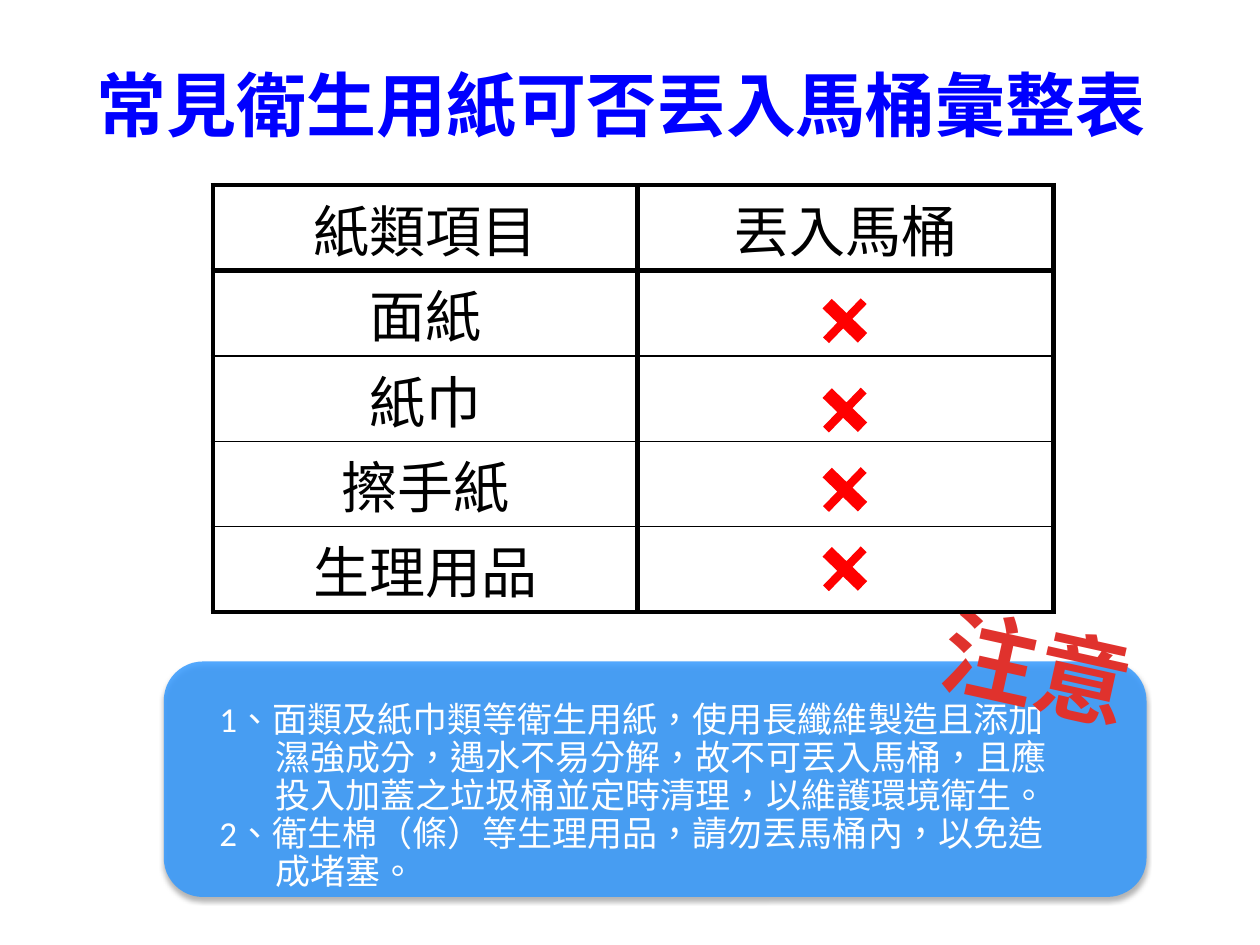
from dataclasses import dataclass

from lxml.etree import SubElement
from pptx import Presentation
from pptx.dml.color import RGBColor
from pptx.enum.lang import MSO_LANGUAGE_ID
from pptx.enum.shapes import MSO_SHAPE
from pptx.enum.text import MSO_ANCHOR, PP_ALIGN
from pptx.oxml.ns import qn
from pptx.util import Pt


@dataclass(frozen=True)
class Theme:
    title: str = "0000FF"
    ink: str = "000000"
    paper: str = "FFFFFF"
    panel: str = "3399FF"
    badge: str = "E0322D"
    cross: str = "FF0000"
    heading_font: str = "Noto Sans CJK SC"
    table_font: str = "Times New Roman"
    note_font: str = "Calibri"
    title_size: int = 40
    table_size: int = 32
    note_size: int = 20
    badge_size: int = 54
    thick: int = 3
    thin: int = 1


def add_element(parent, tag, **attributes):
    return SubElement(parent, qn(tag), {name: str(value) for name, value in attributes.items()})


class SlideBuilder:
    def __init__(self, page, theme):
        self.page = page
        self.theme = theme

    def format_span(self, span, size, colour, font, bold=False):
        span.font.size = Pt(size)
        span.font.bold = bold
        span.font.name = font
        span.font.color.rgb = RGBColor.from_string(colour)
        span.font.language_id = MSO_LANGUAGE_ID.TRADITIONAL_CHINESE
        east_asian = add_element(span.font._element, "a:ea", typeface=self.theme.heading_font)
        span.font._element.find(qn("a:latin")).addnext(east_asian)

    def add_text(self, bounds, text, size, colour, font, bold=False, wrap=False, align=PP_ALIGN.LEFT):
        box = self.page.shapes.add_textbox(*map(Pt, bounds))
        frame = box.text_frame
        frame.word_wrap = wrap
        frame.text = text
        for para in frame.paragraphs:
            para.alignment = align
            for span in para.runs:
                self.format_span(span, size, colour, font, bold)
        return box

    def add_solid_shape(self, kind, bounds, colour):
        shape = self.page.shapes.add_shape(kind, *map(Pt, bounds))
        shape.shadow.inherit = False
        shape.fill.solid()
        shape.fill.fore_color.rgb = RGBColor.from_string(colour)
        shape.line.fill.background()
        return shape

    def add_panel(self, bounds, opacity):
        panel = self.add_solid_shape(MSO_SHAPE.ROUNDED_RECTANGLE, bounds, self.theme.panel)
        properties = panel._element.spPr
        add_element(properties.find(".//" + qn("a:srgbClr")), "a:alpha", val=opacity * 1000)
        shadow = add_element(properties.find(qn("a:effectLst")), "a:outerShdw",
                             blurRad=Pt(3.1), dist=Pt(1.8), dir=90 * 60000, rotWithShape=0)
        colour = add_element(shadow, "a:srgbClr", val=self.theme.ink)
        add_element(colour, "a:alpha", val=35000)

    def add_note(self, bounds, lines, indent, inset):
        box = self.add_text(bounds, "\n".join(text for text, _ in lines), self.theme.note_size,
                            self.theme.paper, self.theme.note_font, wrap=True)
        frame = box.text_frame
        frame.vertical_anchor = MSO_ANCHOR.MIDDLE
        frame.margin_left = frame.margin_right = Pt(inset)
        frame.margin_top = frame.margin_bottom = Pt(inset)
        for para, (_, continued) in zip(frame.paragraphs, lines):
            para.line_spacing = 0.9
            if continued:
                para._p.get_or_add_pPr().set("marL", str(Pt(indent)))

    def add_badge(self, bounds, text, rotation):
        box = self.add_text(bounds, text, self.theme.badge_size, self.theme.badge,
                            self.theme.heading_font, bold=True, align=PP_ALIGN.CENTER)
        box.rotation = rotation
        box.text_frame.paragraphs[0].runs[0].font._element.set("spc", "50")

    def add_cross(self, bounds):
        cross = self.add_solid_shape(MSO_SHAPE.CROSS, bounds, self.theme.cross)
        cross.adjustments[0] = 0.416
        cross.rotation = 314

    def format_cell(self, cell, top, bottom):
        cell.vertical_anchor = MSO_ANCHOR.MIDDLE
        cell.margin_left = cell.margin_right = Pt(0.7)
        cell.margin_top = cell.margin_bottom = Pt(0)
        para = cell.text_frame.paragraphs[0]
        para.alignment = PP_ALIGN.CENTER
        for span in para.runs:
            self.format_span(span, self.theme.table_size, self.theme.ink, self.theme.table_font)
        properties = cell._tc.get_or_add_tcPr()
        thick = self.theme.thick
        for side, width in (("L", thick), ("R", thick), ("T", top), ("B", bottom)):
            line = add_element(properties, f"a:ln{side}", w=Pt(width))
            add_element(add_element(line, "a:solidFill"), "a:srgbClr", val=self.theme.ink)
        cell.fill.solid()
        cell.fill.fore_color.rgb = RGBColor.from_string(self.theme.paper)

    def add_table(self, left, top, widths, row_height, rows):
        count = len(rows)
        table = self.page.shapes.add_table(count, len(widths), Pt(left), Pt(top),
                                           Pt(sum(widths)), Pt(row_height * count)).table
        for column, width in zip(table.columns, widths):
            column.width = Pt(width)
        edges = [self.theme.thick] * 2 + [self.theme.thin] * (count - 2) + [self.theme.thick]
        for row_index, texts in enumerate(rows):
            table.rows[row_index].height = Pt(row_height)
            for column_index, text in enumerate(texts):
                cell = table.cell(row_index, column_index)
                cell.text = text
                self.format_cell(cell, edges[row_index], edges[row_index + 1])


def main():
    deck = Presentation()
    deck.slide_width, deck.slide_height = Pt(720), Pt(540)
    theme = Theme()
    builder = SlideBuilder(deck.slides.add_slide(deck.slide_layouts[6]), theme)

    builder.add_text((48.2, 31.7, 620.6, 55.4), "常見衛生用紙可否丟入馬桶彙整表",
                     theme.title_size, theme.title, theme.heading_font, bold=True)
    builder.add_panel((93.6, 378, 561.6, 134.6), opacity=84)
    note_lines = [
        ("1、面類及紙巾類等衛生用紙，使用長纖維製造且添加", False),
        ("濕強成分，遇水不易分解，故不可丟入馬桶，且應", True),
        ("投入加蓋之垃圾桶並定時清理，以維護環境衛生。", True),
        ("2、衛生棉（條）等生理用品，請勿丟馬桶內，以免造", False),
        ("成堵塞。", True),
    ]
    builder.add_note((115.9, 394.6, 506.2, 121.7), note_lines, indent=32, inset=9.4)
    builder.add_badge((530.6, 344.9, 124.6, 72.7), "注意", rotation=12.6)

    items = ["面紙", "紙巾", "擦手紙", "生理用品"]
    rows = [("紙類項目", "丟入馬桶")] + [(item, "") for item in items]
    builder.add_table(121.7, 105.8, (242.6, 237.6), 48.8, rows)
    for top in (169.2, 220.3, 265.7, 311):
        builder.add_cross((467.3, top, 31, 28.1))

    deck.save("out.pptx")


if __name__ == "__main__":
    main()
